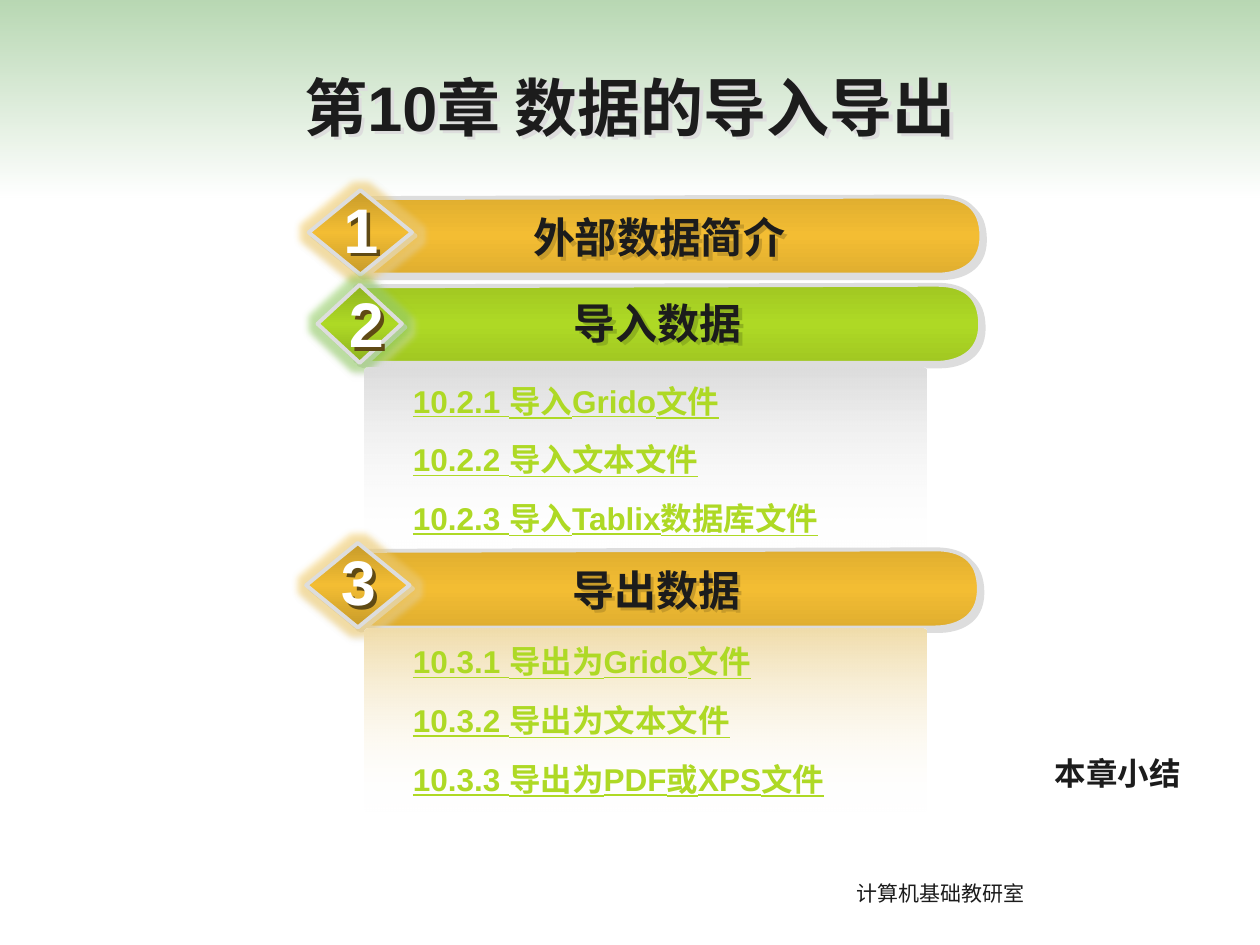
import lxml.etree
import pptx
import pptx.dml.color
import pptx.enum.shapes
import pptx.enum.text
import pptx.oxml.ns
import pptx.util

COLUMNS, ROWS = 100, 75
LATIN, CJK = "Arial", "Noto Sans CJK JP"
INK, SILVER, LIME, GOLD = "1C1C1C", "DDDDDD", "AED925", "F3BD33"
CENTER = pptx.enum.text.PP_ALIGN.CENTER
LEFT = pptx.enum.text.PP_ALIGN.LEFT
MIDDLE = pptx.enum.text.MSO_ANCHOR.MIDDLE
SHAPES = pptx.enum.shapes.MSO_SHAPE
qn = pptx.oxml.ns.qn

deck = pptx.Presentation()
deck.slide_width = pptx.util.Inches(10)
deck.slide_height = pptx.util.Inches(7.5)
COLUMN = deck.slide_width / COLUMNS
ROW = deck.slide_height / ROWS


def rgb(color):
    return pptx.dml.color.RGBColor.from_string(color)


def emu(box):
    left, top, width, height = box
    return [round(v) for v in (left * COLUMN, top * ROW, width * COLUMN, height * ROW)]


def add_color(parent, color, alpha=100):
    value = lxml.etree.SubElement(parent, qn("a:srgbClr"), val=color)
    if alpha < 100:
        lxml.etree.SubElement(value, qn("a:alpha"), val=str(alpha * 1000))


def add_effects(shape, shadow, distance, glow=None):
    properties = shape._element.spPr
    for old in properties.findall(qn("a:effectLst")):
        properties.remove(old)
    effects = lxml.etree.SubElement(properties, qn("a:effectLst"))
    if glow:
        halo = lxml.etree.SubElement(effects, qn("a:glow"), rad=str(pptx.util.Pt(8)))
        add_color(halo, glow, 40)
    cast = lxml.etree.SubElement(effects, qn("a:outerShdw"), blurRad="0",
                                 dist=str(pptx.util.Pt(distance)), dir="2700000",
                                 algn="ctr", rotWithShape="0")
    add_color(cast, shadow)


def fill_gradient(shape, *stops):
    shape.fill.gradient()
    shape.fill.gradient_angle = 270
    stop_list = shape._element.spPr.find(".//" + qn("a:gsLst"))
    for old in list(stop_list):
        stop_list.remove(old)
    for position, color, alpha in stops:
        stop = lxml.etree.SubElement(stop_list, qn("a:gs"), pos=str(position * 1000))
        add_color(stop, color, alpha)


def write(shape, lines, size, color, align=CENTER, bold=True, font=LATIN,
          shadow=None, underline=None, indent=0, gap=0):
    frame = shape.text_frame
    frame.text = "\n".join(lines)
    if shadow:
        add_effects(shape, shadow, 2.8)
    for index, paragraph in enumerate(frame.paragraphs):
        paragraph.alignment = align
        if gap:
            paragraph.space_after = pptx.util.Pt(gap)
            if index:
                paragraph.space_before = pptx.util.Pt(gap)
        if indent:
            paragraph._p.get_or_add_pPr().set("indent", str(round(indent * COLUMN)))
        for run in paragraph.runs:
            run.font.size = pptx.util.Pt(size)
            run.font.bold = bold
            run.font.underline = underline
            run.font.color.rgb = rgb(color)
            run.font.name = font
            lxml.etree.SubElement(run._r.get_or_add_rPr(), qn("a:ea"), typeface=CJK)


def add_label(slide, box, text, size, color, **style):
    label = slide.shapes.add_textbox(*emu(box))
    label.text_frame.word_wrap = True
    label.text_frame.auto_size = pptx.enum.text.MSO_AUTO_SIZE.SHAPE_TO_FIT_TEXT
    write(label, [text], size, color, **style)


def add_plain(slide, preset, box):
    shape = slide.shapes.add_shape(preset, *emu(box))
    shape.shadow.inherit = False
    shape.line.fill.background()
    return shape


def outline(shape, glow=None):
    shape.line.color.rgb = rgb(SILVER)
    shape.line.width = pptx.util.Pt(2.25)
    add_effects(shape, SILVER, 2.8, glow)


def bezier(points, steps=16):
    a, b, c, d = points
    for t in (step / steps for step in range(1, steps + 1)):
        yield tuple((1 - t) ** 3 * p + 3 * t * (1 - t) ** 2 * q + 3 * t * t * (1 - t) * r + t ** 3 * s
                    for p, q, r, s in zip(a, b, c, d))


def add_bar(slide, box, edge, middle):
    left, top, width, height = emu(box)
    lower = [(0.93, 1), (0.96, 1), (1, 0.9), (1, 0.51)]
    upper = [(1, 0.51), (1, 0.12), (0.97, 0), (0.93, 0)]
    corners = [(0, 0.98), (0.03, 1), lower[0], *bezier(lower), *bezier(upper)]
    builder = slide.shapes.build_freeform(left, round(top + 0.02 * height))
    builder.add_line_segments([(round(left + x * width), round(top + y * height))
                               for x, y in corners], close=True)
    bar = builder.convert_to_shape()
    fill_gradient(bar, (0, edge, 100), (50, middle, 100), (100, edge, 100))
    outline(bar)


def add_section(slide, box, number, heading, colors, diamond_box, number_box, heading_drop):
    left, top, width, height = box
    edge, middle, dark, halo = colors
    add_bar(slide, box, edge, middle)

    def inside(part):
        return left + part[0], top + part[1], part[2], part[3]

    diamond = slide.shapes.add_shape(SHAPES.DIAMOND, *emu(inside(diamond_box)))
    fill_gradient(diamond, (0, dark, 100), (50, middle, 100), (100, dark, 100))
    outline(diamond, halo)
    add_label(slide, inside((4.4, heading_drop, 39.2, 5)), heading, 24, INK, shadow=dark)
    add_label(slide, inside(number_box), number, 36, "FFFFFF", shadow="5F4A14")


def add_topics(slide, box, tint, topics):
    panel = add_plain(slide, SHAPES.ROUNDED_RECTANGLE, box)
    panel.adjustments[0] = 0.02
    fill_gradient(panel, (0, tint, 100), (100, "FFFFFF", 0))
    panel.text_frame.word_wrap = False
    panel.text_frame.vertical_anchor = MIDDLE
    write(panel, topics, 18, LIME, align=LEFT, underline=True, indent=2.8, gap=6)


def add_title(slide, box, text):
    title = slide.shapes.title
    title.left, title.top, title.width, title.height = emu(box)
    title.text_frame.vertical_anchor = MIDDLE
    write(title, [text], 36, INK, shadow=SILVER)


def add_summary(slide, box, text):
    summary = add_plain(slide, SHAPES.ROUNDED_RECTANGLE, box)
    summary.adjustments[0] = 0.02
    summary.fill.background()
    summary.text_frame.word_wrap = False
    summary.text_frame.vertical_anchor = MIDDLE
    write(summary, [text], 18, INK)


def add_band(slide, box):
    band = add_plain(slide, SHAPES.RECTANGLE, box)
    fill_gradient(band, (0, "4E9D41", 40), (100, "FFFFFF", 40))
    slide.shapes._spTree.insert(2, band._element)


def main():
    slide = deck.slides.add_slide(deck.slide_layouts[5])
    add_band(slide, (0, 0, COLUMNS, 15.7))
    add_title(slide, (0, 3.7, COLUMNS, 9.4), "第10章 数据的导入导出")
    add_label(slide, (67, 69.4, 17.1, 3), "计算机基础教研室", 12, INK,
              align=LEFT, bold=False, font=CJK)

    gold = ("E0AE2F", GOLD, "C79B2A", GOLD)
    green = ("A1C822", LIME, "8EB21E", "6CBF2A")
    wide = ((-3.8, -0.5, 8.2, 6.7), (-2.3, -1, 5.3, 7.1), 0.7)
    narrow = ((-3, 0, 6.7, 6.2), (-1.5, -0.5, 3.3, 7), 0.5)
    add_section(slide, (28.3, 15.6, 49.6, 6.2), "1", "外部数据简介", gold, *wide)
    add_section(slide, (28.2, 22.6, 49.6, 6.2), "2", "导入数据", green, *narrow)
    add_topics(slide, (28.9, 29.2, 44.6, 14.5), SILVER,
               ["10.2.1 导入Grido文件", "10.2.2 导入文本文件", "10.2.3 导入Tablix数据库文件"])
    add_section(slide, (28.1, 43.6, 49.6, 6.2), "3", "导出数据", gold, *wide)
    add_topics(slide, (28.9, 49.9, 44.6, 14.5), "F1DDAB",
               ["10.3.1 导出为Grido文件", "10.3.2 导出为文本文件", "10.3.3 导出为PDF或XPS文件"])
    add_summary(slide, (81.6, 59.3, 14.2, 4.1), "本章小结")
    deck.save("out.pptx")


if __name__ == "__main__":
    main()
